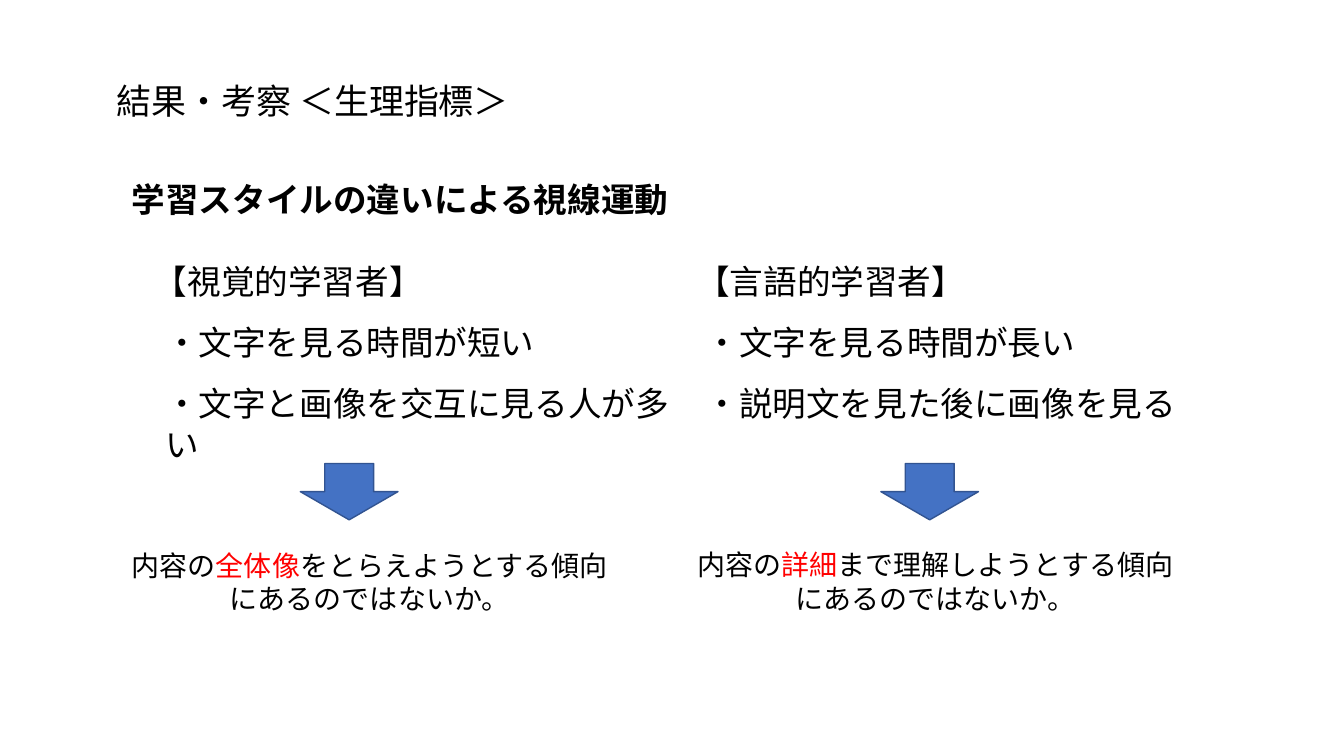
from dataclasses import dataclass

from lxml.etree import SubElement
from pptx import Presentation
from pptx.dml.color import RGBColor
from pptx.enum.shapes import MSO_SHAPE
from pptx.enum.text import MSO_AUTO_SIZE, PP_ALIGN
from pptx.oxml.ns import qn
from pptx.util import Cm, Pt


@dataclass(frozen=True)
class Theme:
    font: str = "Noto Sans CJK JP"
    ink: str = "000000"
    accent: str = "FF0000"
    fill: str = "4472C4"
    edge: str = "325491"
    title: int = 25
    body: int = 24
    note: int = 20


def write(para, text, font, size, color, bold=None):
    run = para.add_run()
    run.text = text
    run.font.size = Pt(size)
    run.font.bold = bold
    run.font.color.rgb = RGBColor.from_string(color)
    run.font.name = font
    SubElement(run._r.get_or_add_rPr(), qn("a:ea"), typeface=font)


class Page:
    def __init__(self, slide, theme):
        self.slide = slide
        self.theme = theme

    def label(self, box, parts, size, bold=None, wrap=True, align=None):
        frame = self.slide.shapes.add_textbox(*map(Cm, box)).text_frame
        frame.word_wrap = wrap
        frame.auto_size = MSO_AUTO_SIZE.SHAPE_TO_FIT_TEXT
        para = frame.paragraphs[0]
        para.alignment = align
        for order, text in enumerate(parts):
            color = self.theme.accent if order % 2 else self.theme.ink
            write(para, text, font=self.theme.font, size=size, color=color, bold=bold)

    def arrow(self, box):
        shape = self.slide.shapes.add_shape(MSO_SHAPE.DOWN_ARROW, *map(Cm, box))
        shape.shadow.inherit = False
        shape.fill.solid()
        shape.fill.fore_color.rgb = RGBColor.from_string(self.theme.fill)
        shape.line.color.rgb = RGBColor.from_string(self.theme.edge)
        shape.line.width = Pt(1)


@dataclass(frozen=True)
class Group:
    head: str
    facts: tuple
    result: tuple
    head_left: float
    head_width: float
    fact_left: float
    fact_width: float
    note_left: float
    note_top: float
    arrow_left: float


GROUPS = (
    Group(
        "【視覚的学習者】",
        ("・文字を見る時間が短い", "・文字と画像を交互に見る人が多い"),
        ("内容の", "全体像", "をとらえようとする傾向にあるのではないか。"),
        head_left=3.63, head_width=9.3, fact_left=3.91, fact_width=13.64,
        note_left=3.02, note_top=13.69, arrow_left=7.57,
    ),
    Group(
        "【言語的学習者】",
        ("・文字を見る時間が長い", "・説明文を見た後に画像を見る"),
        ("内容の", "詳細", "まで理解しようとする傾向にあるのではないか。"),
        head_left=17.3, head_width=8.6, fact_left=17.53, fact_width=14.25,
        note_left=17.27, note_top=13.67, arrow_left=22.2,
    ),
)
TOP, STEP, LINE = 6.45, 1.54, 1.28


def main():
    deck = Presentation()
    deck.slide_width, deck.slide_height = Cm(33.87), Cm(19.05)
    theme = Theme()
    page = Page(deck.slides.add_slide(deck.slide_layouts[6]), theme)

    page.label((2.69, 1.88, 11.56, 1.32), ["結果・考察 ＜生理指標＞"], theme.title)
    page.label((3.07, 4.39, 14.2, LINE), ["学習スタイルの違いによる視線運動"],
               theme.body, bold=True, wrap=False)
    for group in GROUPS:
        page.label((group.head_left, TOP, group.head_width, LINE), [group.head], theme.body)
        for row, fact in enumerate(group.facts, 1):
            page.label((group.fact_left, TOP + row * STEP, group.fact_width, LINE),
                       [fact], theme.body)
        page.label((group.note_left, group.note_top, 12.6, 1.96), group.result,
                   theme.note, align=PP_ALIGN.CENTER)
        page.arrow((group.arrow_left, 11.68, 2.46, 1.42))

    deck.save("out.pptx")


if __name__ == "__main__":
    main()
